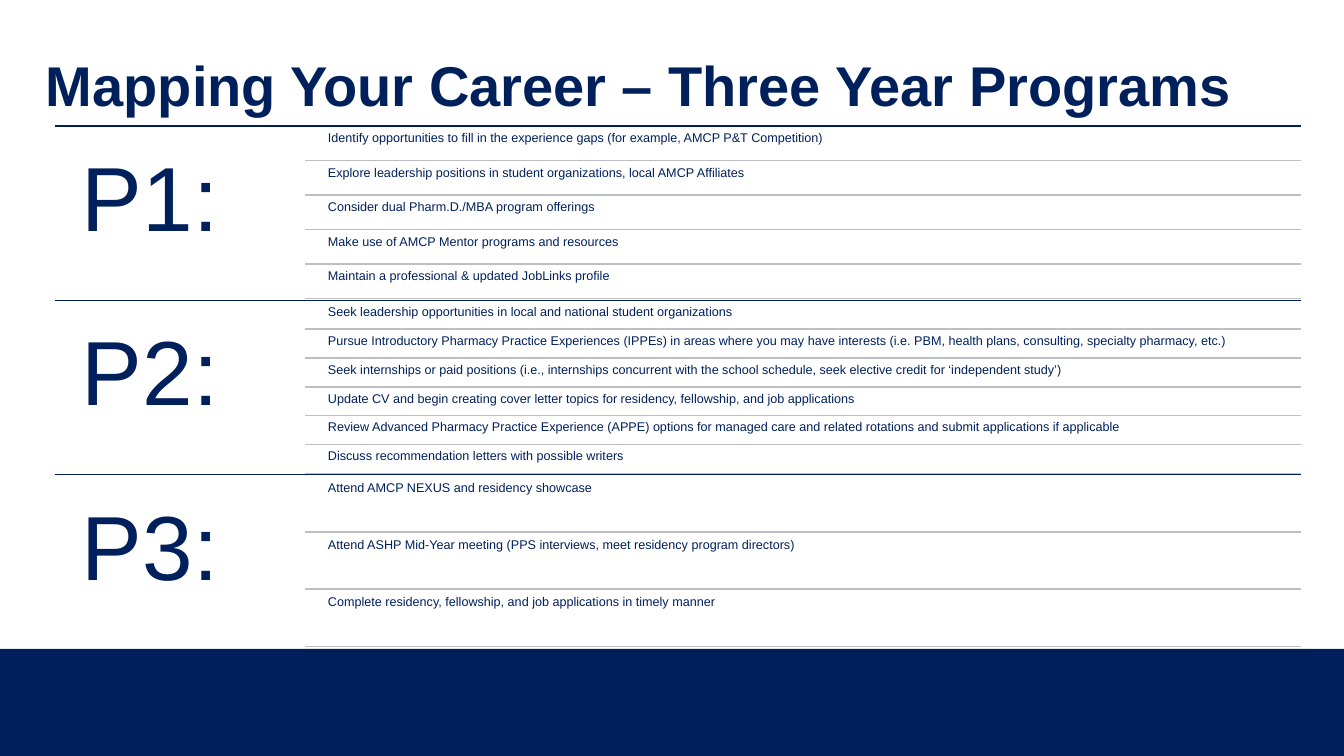
"""Build the three year career map slide."""
from lxml import etree
from pptx import Presentation
from pptx import util as u
from pptx.dml.color import RGBColor
from pptx.enum import shapes, text
from pptx.oxml.ns import qn

TITLE = "Mapping Your Career – Three Year Programs"
YEARS = {
    "P1:": [
        "Identify opportunities to fill in the experience gaps (for example, AMCP P&T Competition)",
        "Explore leadership positions in student organizations, local AMCP Affiliates",
        "Consider dual Pharm.D./MBA program offerings",
        "Make use of AMCP Mentor programs and resources",
        "Maintain a professional & updated JobLinks profile",
    ],
    "P2:": [
        "Seek leadership opportunities in local and national student organizations",
        "Pursue Introductory Pharmacy Practice Experiences (IPPEs) in areas where you may have interests "
        "(i.e. PBM, health plans, consulting, specialty pharmacy, etc.)",
        "Seek internships or paid positions (i.e., internships concurrent with the school schedule, "
        "seek elective credit for ‘independent study’)",
        "Update CV and begin creating cover letter topics for residency, fellowship, and job applications",
        "Review Advanced Pharmacy Practice Experience (APPE) options for managed care and related "
        "rotations and submit applications if applicable",
        "Discuss recommendation letters with possible writers",
    ],
    "P3:": [
        "Attend AMCP NEXUS and residency showcase",
        "Attend ASHP Mid-Year meeting (PPS interviews, meet residency program directors)",
        "Complete residency, fellowship, and job applications in timely manner",
    ],
}

NAVY = RGBColor(0x00, 0x20, 0x5B)
GREY = RGBColor(0xBD, 0xBD, 0xC4)
WIDE, HIGH = 1344, 756
LEFT, RULE, ITEM, RIGHT = 55, 305, 324, 1301
TOP, FOOT = 126, 649
GAP = 0.05


def px(n):
    return u.Emu(round(n * 12192000 / WIDE))


def write(slide, words, box, size, inset=0, bold=False, anchor=text.MSO_ANCHOR.TOP):
    frame = slide.shapes.add_textbox(*map(px, box)).text_frame
    frame.word_wrap = True
    frame.vertical_anchor = anchor
    frame.margin_left = frame.margin_right = px(inset)
    frame.margin_top = frame.margin_bottom = px(inset)
    frame.text = words
    para = frame.paragraphs[0]
    para.line_spacing = 0.9
    font = para.runs[0].font
    font.name, font.size, font.bold = "Arial", u.Pt(size), bold
    font.color.rgb = NAVY


def rule(slide, left, y, color):
    line = slide.shapes.add_connector(
        shapes.MSO_CONNECTOR.STRAIGHT, px(left), px(y), px(RIGHT), px(y))
    line.line.color.rgb = color
    line.line.width = u.Pt(1)
    etree.SubElement(line._element.spPr, qn("a:effectLst"))


def main():
    deck = Presentation()
    deck.slide_width, deck.slide_height = px(WIDE), px(HIGH)
    slide = deck.slides.add_slide(deck.slide_layouts[6])

    bar = slide.shapes.add_shape(
        shapes.MSO_SHAPE.RECTANGLE, 0, px(FOOT), px(WIDE), px(HIGH - FOOT))
    bar.shadow.inherit = False
    bar.fill.solid()
    bar.fill.fore_color.rgb = NAVY
    bar.line.fill.background()

    write(slide, TITLE, (46, 10, 1206, 156), 40, bold=True, anchor=text.MSO_ANCHOR.MIDDLE)

    band = (FOOT - TOP) / len(YEARS)
    for i, (year, items) in enumerate(YEARS.items()):
        top = TOP + i * band
        rule(slide, LEFT, top, NAVY)
        write(slide, year, (LEFT, top, RULE - LEFT, band), 65, inset=27)
        count = len(items)
        tall = band / (count + (count + 1) * GAP)
        for j, item in enumerate(items):
            y = top + tall * (GAP + j * (1 + GAP))
            write(slide, item, (ITEM, y, RIGHT - ITEM, tall), 9, inset=4)
            rule(slide, RULE, y + tall, GREY)

    deck.save("out.pptx")


if __name__ == "__main__":
    main()
